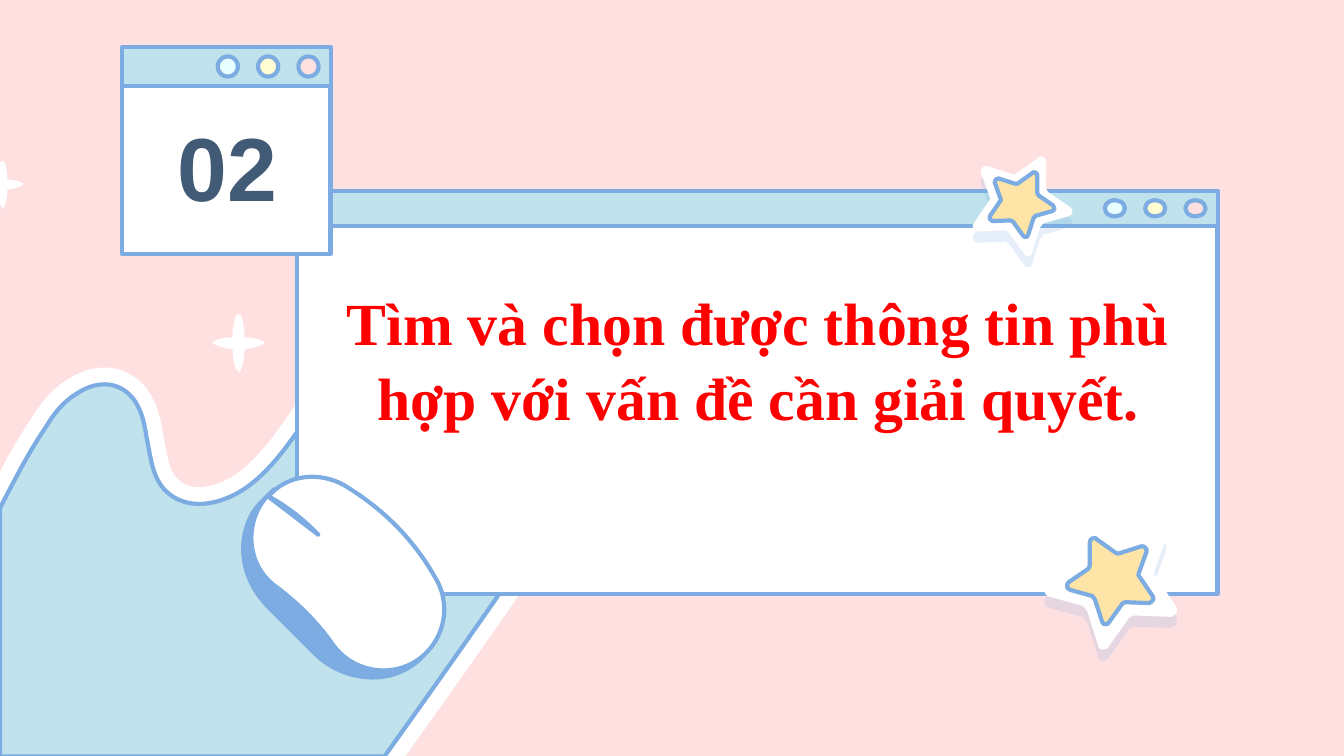
from lxml import etree
from pptx import Presentation
from pptx.dml.color import RGBColor
from pptx.enum.shapes import MSO_SHAPE as Preset
from pptx.enum.text import MSO_ANCHOR as Anchor, PP_ALIGN as Align
from pptx.oxml.ns import qn
from pptx.util import Emu, Pt

EMU_PER_PX = 9144  # 100 px to the inch

COLORS = {
    "pink": "FFE0E1", "sky": "BFE2EC", "outline": "7CACE1", "white": "FFFFFF",
    "ice": "E7FFFF", "cream": "FFFDD1", "gold": "FEE4A7", "aqua": "BDFFFF",
    "red": "FF0000", "slate": "415A75",
}

# Outlines: M = start, L = line, C = cubic curve, Z = close
WAVE_SIZE = (428, 316)
WAVE = """M 333 0 C 304 0 275 13 254 33 C 228 58 213 95 183 116
C 173 123 160 128 148 128 C 139 128 130 125 123 118 C 113 108 112 92 109 78
C 107 64 103 49 90 42 C 86 40 82 39 78 39 C 70 39 63 42 57 46
C 47 52 40 61 34 71 C 21 90 11 110 0 131 L 0 316 L 286 316
C 321 267 356 218 390 168 C 406 145 422 121 425 94 C 428 55 400 17 362 5
C 353 2 343 0 333 0 Z"""

SPARKLE_SIZE = (38, 43)
SPARKLE = """M 20 0 C 19 0 19 0 18 0 C 16 5 15 11 15 17 C 10 17 5 18 1 20
C 0 20 0 22 1 22 C 5 24 10 25 15 26 C 15 32 17 42 19 42 C 19 43 19 43 20 43
C 20 43 21 42 21 42 C 23 37 24 31 24 26 C 29 25 34 24 38 22
C 39 21 38 20 38 20 C 34 18 29 17 24 17 C 24 11 23 5 21 0 Z"""

STAR_SIZE = (100, 100)
STAR = """M 29 1 C 31 0 33 0 34 2 L 55 17 C 56 18 58 19 60 18 L 85 10
C 88 9 92 13 91 16 L 82 41 C 81 43 82 45 83 45 L 98 67 C 100 69 99 73 96 74
C 95 75 94 75 94 75 L 67 74 C 66 74 64 75 63 76 L 48 97 C 47 98 47 99 46 99
C 43 100 40 99 40 96 L 32 71 C 31 69 30 69 29 67 L 4 60 C -1 59 -1 53 2 51
L 24 36 C 25 35 26 33 26 32 L 26 6 C 26 3 27 2 29 1 Z"""

MOUSE_SIZE = (151, 154)
MOUSE_BASE = """M 23 13 L 140 130 L 131 140 C 122 148 112 152 100 153
C 82 154 65 147 53 135 L 19 101 C 6 88 -1 71 0 54 C 1 42 5 31 13 23 Z"""
MOUSE_BODY = """M 20 17 C 34 2 57 0 75 10 C 103 27 126 49 143 79
C 154 97 151 120 136 135 C 117 154 84 152 67 129 C 56 113 41 98 25 86
C 2 70 0 37 19 17 Z"""
MOUSE_SLIT = "M 18 18 C 18 18 37 27 56 47 Z"


def px(value):
    return Emu(round(value * EMU_PER_PX))


def rgb(name):
    return RGBColor.from_string(COLORS[name])


def paint(shape, fill, line="outline", width=2.25):
    shape.shadow.inherit = False
    shape.fill.solid()
    shape.fill.fore_color.rgb = rgb(fill)
    if line:
        shape.line.color.rgb = rgb(line)
        shape.line.width = Pt(width)
    else:
        shape.line.fill.background()


def add_preset(slide, preset, box, fill):
    shape = slide.shapes.add_shape(preset, *map(px, box))
    paint(shape, fill)
    return shape


def add_outline(slide, outline, size, box, fill, flip=False, **line_style):
    """Fit an outline drawn at the given size into the box."""
    left, top, width, height = box
    commands, numbers = [], []
    for token in outline.split():
        if token.isalpha():
            commands.append(token)
        else:
            numbers.append(int(token))

    def place(x, y):
        x = size[0] - x if flip else x
        return px(left + x * width / size[0]), px(top + y * height / size[1])

    points = [place(x, y) for x, y in zip(numbers[::2], numbers[1::2])]
    builder = slide.shapes.build_freeform(*points[0])
    builder.add_line_segments(points[1:], close=True)
    shape = builder.convert_to_shape()

    # Gather each three points of a curve into one cubic segment
    segments = iter(shape._element.findall(".//" + qn("a:lnTo")))
    for command in commands[1:-1]:
        segment = next(segments)
        if command == "C":
            segment.tag = qn("a:cubicBezTo")
            for _ in range(2):
                extra = next(segments)
                segment.append(extra[0])
                extra.getparent().remove(extra)
    paint(shape, fill, **line_style)
    return shape


def add_drop_shadow(shape):
    effects = shape._element.spPr.find(qn("a:effectLst"))
    shadow = etree.SubElement(effects, qn("a:outerShdw"), blurRad="0",
                              dist=str(Pt(6)), dir="5400000", rotWithShape="0")
    color = etree.SubElement(shadow, qn("a:srgbClr"), val=COLORS["outline"])
    etree.SubElement(color, qn("a:alpha"), val="18000")


def add_text(slide, box, text, font_name, size, color, anchor, spacing):
    frame = slide.shapes.add_textbox(*map(px, box)).text_frame
    frame.word_wrap = True
    frame.vertical_anchor = anchor
    frame.margin_left = frame.margin_right = px(10)
    frame.margin_top = frame.margin_bottom = px(10)
    paragraph = frame.paragraphs[0]
    paragraph.text = text
    paragraph.alignment = Align.CENTER
    paragraph.line_spacing = spacing
    font = paragraph.font
    font.name, font.size, font.bold = font_name, Pt(size), True
    font.color.rgb = rgb(color)


def add_window(slide, box, bar_height, dot_height):
    left, top, width, height = box
    add_preset(slide, Preset.RECTANGLE,
               (left, top + bar_height, width, height - bar_height), "white")
    bar = add_preset(slide, Preset.ROUND_2_SAME_RECTANGLE,
                     (left, top, width, bar_height), "sky")
    bar.adjustments[0] = 0
    # Three dots at the right end of the title bar
    dot_top = top + (bar_height - dot_height) / 2
    for index, fill in enumerate(("ice", "cream", "pink")):
        dot_left = left + width - 84 + 30 * index
        add_preset(slide, Preset.OVAL, (dot_left, dot_top, 15, dot_height), fill)


def add_wave(slide, box):
    add_outline(slide, WAVE, WAVE_SIZE, box, "sky", line="white", width=18)
    add_outline(slide, WAVE, WAVE_SIZE, box, "sky")


def add_sparkle(slide, box):
    add_outline(slide, SPARKLE, SPARKLE_SIZE, box, "white", line=None)


def add_mouse(slide, box):
    for outline, fill in ((MOUSE_BASE, "outline"), (MOUSE_BODY, "white"),
                          (MOUSE_SLIT, "aqua")):
        add_outline(slide, outline, MOUSE_SIZE, box, fill)


def add_star(slide, box, flip=False):
    left, top, width, height = box
    rim = add_outline(slide, STAR, STAR_SIZE, box, "white", flip, line=None)
    add_drop_shadow(rim)
    core = (left + width * 0.17, top + height * 0.16, width * 0.65, height * 0.65)
    add_outline(slide, STAR, STAR_SIZE, core, "gold", flip)


def build_section_slide(presentation):
    slide = presentation.slides.add_slide(presentation.slide_layouts[6])
    slide.background.fill.solid()
    slide.background.fill.fore_color.rgb = rgb("pink")

    # Backdrop
    add_wave(slide, (0, 247, 428, 316))
    add_sparkle(slide, (-14, 120, 31, 35))

    # Title and number windows
    add_window(slide, (221, 142, 685, 300), bar_height=26, dot_height=12)
    add_window(slide, (91, 35, 155, 154), bar_height=29, dot_height=15)
    add_text(slide, (223, 153, 683, 179),
             "Tìm và chọn được thông tin phù hợp với vấn đề cần giải quyết.",
             "Times New Roman", 32, "red", Anchor.BOTTOM, 1.05)
    add_text(slide, (116, 73, 107, 101), "02", "Arial", 48, "slate",
             Anchor.MIDDLE, 1)

    # Decorations
    add_mouse(slide, (181, 351, 151, 154))
    add_star(slide, (777, 384, 100, 100))
    add_sparkle(slide, (158, 234, 38, 43))
    add_star(slide, (723, 116, 75, 75), flip=True)


def main():
    presentation = Presentation()
    presentation.slide_width, presentation.slide_height = px(1000), px(562.5)
    build_section_slide(presentation)
    presentation.save("out.pptx")


if __name__ == "__main__":
    main()
